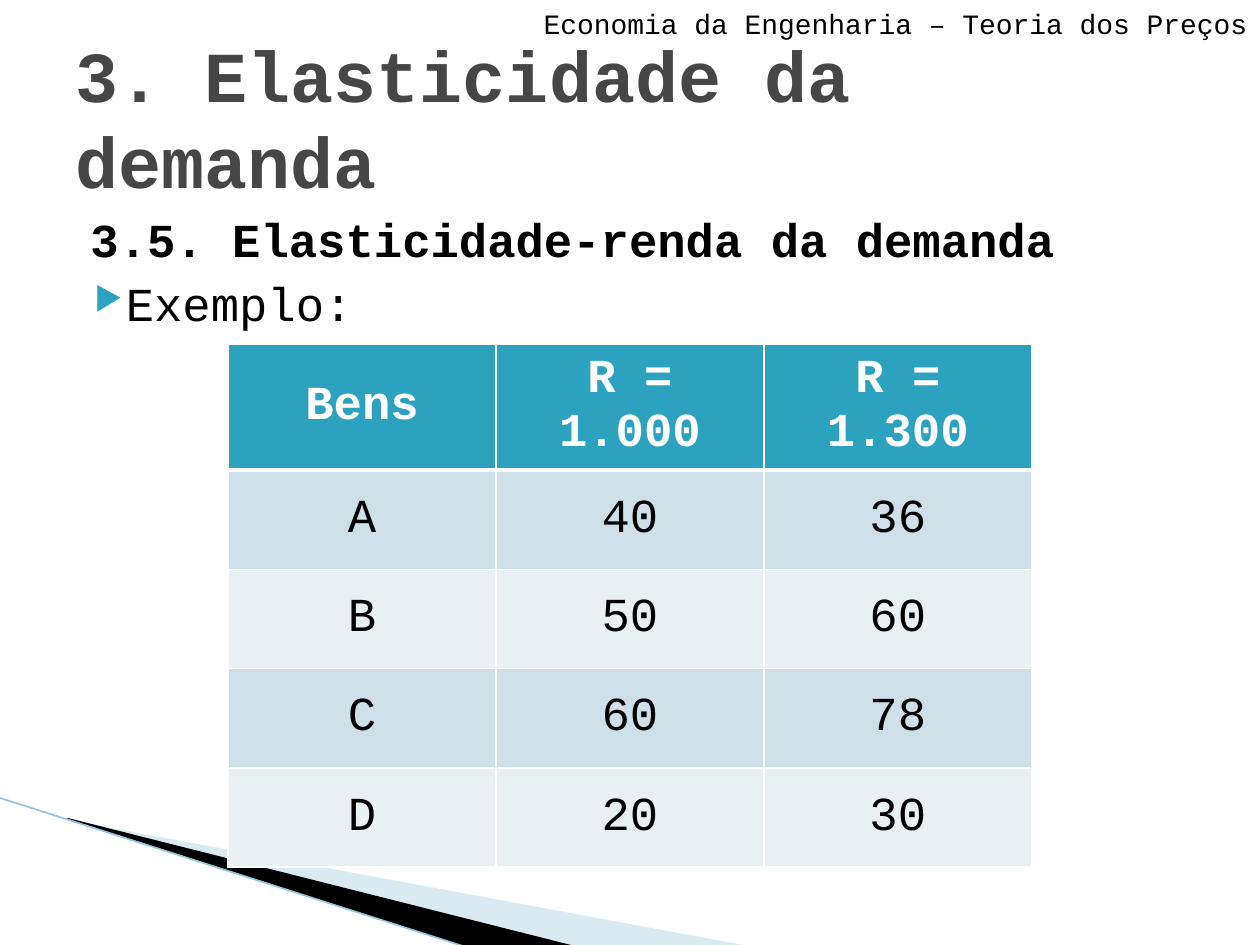
from lxml.etree import SubElement
from pptx import Presentation
from pptx.dml.color import RGBColor
from pptx.enum.shapes import MSO_CONNECTOR
from pptx.enum.text import MSO_ANCHOR as Anchor, PP_ALIGN as Align
from pptx.oxml.ns import qn
from pptx.util import Emu, Inches, Pt

# Content
HEADER = "Economia da Engenharia – Teoria dos Preços"
TITLE = "3. Elasticidade da demanda"
SUBTITLE = "3.5. Elasticidade-renda da demanda"
EXAMPLE = "Exemplo:"
GOODS = [
    ("Bens", "R = 1.000", "R = 1.300"),
    ("A", "40", "36"),
    ("B", "50", "60"),
    ("C", "60", "78"),
    ("D", "20", "30"),
]

# Style
FONT = "Courier New"
BLACK, WHITE, GREY, TEAL = "000000", "FFFFFF", "464646", "2DA2BF"
BANDS = ("CDE0E8", "E8F0F4")
WEDGES = [  # points, colour, opacity in percent
    ([(0.55, 6.51), (5.95, 7.51), (4.56, 7.51), (0.55, 6.5)], "A0CBDC", 40),
    ([(0.53, 6.49), (4.57, 7.51), (3.72, 7.52), (0.54, 6.5)], BLACK, 100),
]
EDGE = [(-0.01, 6.33), (3.71, 7.52)]

deck = Presentation()
deck.slide_width, deck.slide_height = Inches(10), Inches(7.5)
WIDTH, HEIGHT = deck.slide_width, deck.slide_height
page = deck.slides.add_slide(deck.slide_layouts[5])
shapes = page.shapes


def color(hex_code):
    return RGBColor.from_string(hex_code)


def write(para, text, size=27, ink=BLACK, bold=False, align=Align.LEFT):
    para.alignment = align
    span = para.add_run()
    span.text = text
    font = span.font
    font.name, font.size, font.bold = FONT, Pt(size), bold
    font.color.rgb = color(ink)


def indent(para, left, first):
    properties = para._p.get_or_add_pPr()
    properties.set("marL", str(Inches(left)))
    properties.set("indent", str(Inches(first)))
    return properties


def add_bullet(properties, mark, ink, percent):
    tint = SubElement(properties, qn("a:buClr"))
    SubElement(tint, qn("a:srgbClr"), val=ink)
    SubElement(properties, qn("a:buSzPct"), val=str(percent * 1000))
    SubElement(properties, qn("a:buChar"), char=mark)


def set_borders(cell, bottom):
    properties = cell._tc.get_or_add_tcPr()
    widths = {"a:lnL": 1, "a:lnR": 1, "a:lnT": 1, "a:lnB": bottom}
    for place, (tag, width) in enumerate(widths.items()):
        line = SubElement(properties, qn(tag), w=str(Pt(width)))
        fill = SubElement(line, qn("a:solidFill"))
        SubElement(fill, qn("a:srgbClr"), val=WHITE)
        properties.insert(place, line)  # borders go before the fill


# Corner wedges and their edge line
for points, ink, opacity in WEDGES:
    corners = [(Inches(x), Inches(y)) for x, y in points]
    builder = shapes.build_freeform(*corners[0], scale=1.0)
    builder.add_line_segments(corners[1:], close=True)
    wedge = builder.convert_to_shape()
    wedge.shadow.inherit = False
    wedge.fill.solid()
    wedge.fill.fore_color.rgb = color(ink)
    wedge.line.fill.background()
    if opacity < 100:
        tint = wedge._element.spPr.find(".//" + qn("a:srgbClr"))
        SubElement(tint, qn("a:alpha"), val=str(opacity * 1000))

ends = [Inches(value) for point in EDGE for value in point]
edge = shapes.add_connector(MSO_CONNECTOR.STRAIGHT, *ends)
edge.line.color.rgb, edge.line.width = color("97C5D8"), Pt(0.95)
SubElement(edge._element.spPr, qn("a:effectLst"))

# Title
margin = Emu(int(WIDTH * 0.05))
content_width = WIDTH - 2 * margin
title = shapes.title
title.left, title.top = margin, Emu(int(HEIGHT * 0.04))
title.width, title.height = content_width, Inches(1.25)
title.text_frame.word_wrap = True
title.text_frame.vertical_anchor = Anchor.MIDDLE
write(title.text_frame.paragraphs[0], TITLE, size=41, ink=GREY, bold=True)

# Subtitle and example line
body = shapes.add_textbox(margin, Inches(1.62), content_width, Inches(4.95))
frame = body.text_frame
frame.word_wrap = True
heading = frame.paragraphs[0]
indent(heading, 0.98, -0.86)
write(heading, SUBTITLE, bold=True)
example = frame.add_paragraph()
example.space_before = Pt(4)
add_bullet(indent(example, 0.4, -0.25), "▶", TEAL, 68)
write(example, EXAMPLE)

# Running header
header = shapes.add_textbox(0, 0, WIDTH, Inches(0.35))
header.text_frame.word_wrap = True
write(header.text_frame.paragraphs[0], HEADER, size=16, align=Align.RIGHT)

# Table, centred across the slide
table_width = Inches(6.38)
frame = shapes.add_table(len(GOODS), len(GOODS[0]), (WIDTH - table_width) // 2,
                         Inches(2.73), table_width, Inches(3.94))
for row, values in enumerate(GOODS):
    is_head = row == 0
    for column, value in enumerate(values):
        cell = frame.table.cell(row, column)
        cell.vertical_anchor = Anchor.MIDDLE
        cell.fill.solid()
        cell.fill.fore_color.rgb = color(TEAL if is_head else BANDS[(row - 1) % 2])
        set_borders(cell, bottom=3 if is_head else 1)
        write(cell.text_frame.paragraphs[0], value, bold=is_head,
              ink=WHITE if is_head else BLACK, align=Align.CENTER)

deck.save("out.pptx")
